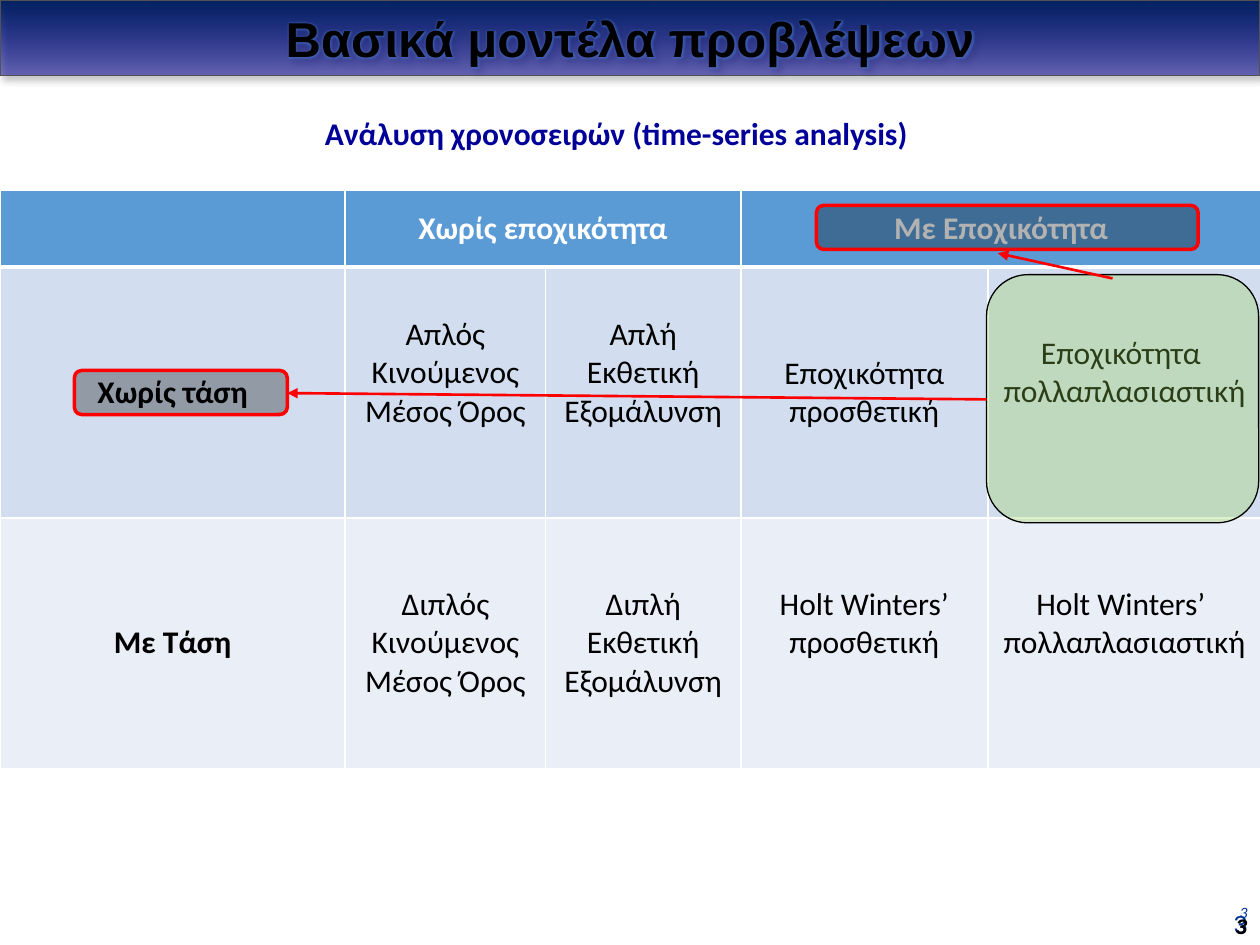
from lxml.etree import SubElement
from pptx import Presentation
from pptx.dml.color import RGBColor
from pptx.enum.shapes import MSO_CONNECTOR, MSO_SHAPE
from pptx.enum.text import MSO_ANCHOR, MSO_AUTO_SIZE, PP_ALIGN
from pptx.oxml import parse_xml
from pptx.oxml.ns import nsdecls, qn
from pptx.util import Inches, Pt

# Content
TITLE = "Βασικά μοντέλα προβλέψεων"
SUBTITLE = "Ανάλυση χρονοσειρών (time-series analysis)"
HEADERS = {1: "Χωρίς εποχικότητα", 3: "Με Εποχικότητα"}  # each spans two columns
MODELS = [
    ["Χωρίς τάση", "Απλός Κινούμενος Μέσος Όρος", "Απλή Εκθετική Εξομάλυνση",
     "Εποχικότητα προσθετική", "Εποχικότητα \nπολλαπλασιαστική"],
    ["Με Τάση", "Διπλός Κινούμενος Μέσος Όρος", "Διπλή Εκθετική Εξομάλυνση",
     "Holt Winters’ προσθετική", "Holt Winters’ \nπολλαπλασιαστική"],
]
RAISED = {(1, 1), (1, 2), (1, 4), (2, 3), (2, 4)}  # cells whose text sits higher
COLUMNS = [2.74, 1.59, 1.55, 1.96, 2.17]
ROWS = [0.61, 1.99, 1.99]
ROW_FILLS = ["5B9BD5", "D2DEEF", "EAEFF7"]
PAGE_NUMBERS = [  # box, anchor, font
    ((7.67, 6.98, 2.33, 0.52), MSO_ANCHOR.MIDDLE,
     dict(size=Pt(9), name="Calibri", color="003399", italic=True)),
    ((7.67, 6.98, 2.33, 0.52), MSO_ANCHOR.BOTTOM,
     dict(size=Pt(14), name="Arial", color="003399")),
    ((9.5, 7.2, 0.5, 0.3), MSO_ANCHOR.BOTTOM,
     dict(size=Pt(12), name="Arial", color="000000", bold=True, italic=True)),
]
HIGHLIGHTS = [  # box, fill, line colour, line width
    ((7.83, 2.18, 2.16, 1.97), "92D050", "000000", 0.75),
    ((6.48, 1.63, 3.03, 0.35), "000000", "FF0000", 2),
    ((0.59, 2.94, 1.69, 0.35), "000000", "FF0000", 2),
]
ARROWS = [((7.83, 3.17), (2.28, 3.12)), ((8.83, 2.21), (7.92, 2.01))]


def rgb(value):
    return RGBColor.from_string(value)


def inches(values):
    return [Inches(value) for value in values]


def write(frame, text, align, color, **font_format):
    frame.text = text
    for paragraph in frame.paragraphs:
        paragraph.alignment = align
        font = paragraph.runs[0].font
        font.color.rgb = rgb(color)
        for key, value in font_format.items():
            setattr(font, key, value)


def border(cell, side, width):
    line = SubElement(cell._tc.get_or_add_tcPr(), qn("a:ln" + side), w=str(Pt(width)))
    SubElement(SubElement(line, qn("a:solidFill")), qn("a:srgbClr"), val="FFFFFF")


def shadow(blur, distance, alpha):
    return (f'<a:outerShdw blurRad="{Pt(blur)}" dist="{Pt(distance)}" dir="2700000" '
            f'algn="tl" rotWithShape="0"><a:srgbClr val="000000">'
            f'<a:alpha val="{alpha}000"/></a:srgbClr></a:outerShdw>')


def effects(content):
    return parse_xml(f'<a:effectLst {nsdecls("a")}>{content}</a:effectLst>')


prs = Presentation()
prs.slide_width, prs.slide_height = inches((10, 7.5))
slide = prs.slides.add_slide(prs.slide_layouts[6])
shapes = slide.shapes

# Table of models
table = shapes.add_table(len(ROWS), len(COLUMNS),
                         *inches((0, 1.51, sum(COLUMNS), sum(ROWS)))).table
for column, width in zip(table.columns, COLUMNS):
    column.width = Inches(width)
for row, height in zip(table.rows, ROWS):
    row.height = Inches(height)

header_row = [HEADERS.get(c, "") for c in range(len(COLUMNS))]
for r, texts in enumerate([header_row] + MODELS):
    for c, text in enumerate(texts):
        cell = table.cell(r, c)
        cell.vertical_anchor = MSO_ANCHOR.MIDDLE
        if (r, c) in RAISED:
            cell.margin_bottom = Inches(0.36)
        for side in "LRTB":
            header_edge = (r, side) in ((0, "B"), (1, "T"))
            border(cell, side, 3 if header_edge else 1)
        cell.fill.solid()
        cell.fill.fore_color.rgb = rgb(ROW_FILLS[r])
        if text:
            write(cell.text_frame, text, PP_ALIGN.CENTER,
                  "000000" if r else "FFFFFF",
                  size=Pt(18), name="Calibri", bold=r == 0 or c == 0)
for c in HEADERS:
    table.cell(0, c).merge(table.cell(0, c + 1))

# Page numbers
for box, anchor, font_format in PAGE_NUMBERS:
    frame = shapes.add_textbox(*inches(box)).text_frame
    frame.word_wrap = True
    frame.vertical_anchor = anchor
    write(frame, "3", PP_ALIGN.RIGHT, **font_format)

# Title bar with a gradient, a shadow and glowing text
bar = shapes.add_shape(MSO_SHAPE.RECTANGLE, *inches((0, 0, 10, 0.6)))
bar.line.color.rgb = rgb("525252")
bar.line.width = Pt(0.75)
bar_properties = bar._element.spPr
bar_properties.insert(2, parse_xml(
    f'<a:gradFill {nsdecls("a")} rotWithShape="1"><a:gsLst>'
    '<a:gs pos="0"><a:srgbClr val="000099"><a:alpha val="50000"/></a:srgbClr></a:gs>'
    '<a:gs pos="100000"><a:srgbClr val="002060"/></a:gs>'
    '</a:gsLst><a:lin ang="16200000" scaled="0"/></a:gradFill>'))
bar_properties.append(effects(shadow(4, 3, 40)))
bar.text_frame.vertical_anchor = MSO_ANCHOR.MIDDLE
write(bar.text_frame, TITLE, PP_ALIGN.CENTER, "000000",
      size=Pt(28), name="Arial", bold=True)
title_properties = bar.text_frame.paragraphs[0].runs[0]._r.get_or_add_rPr()
glow = (f'<a:glow rad="{Pt(4)}"><a:srgbClr val="4472C4">'
        '<a:alpha val="60000"/></a:srgbClr></a:glow>')
title_properties.find(qn("a:solidFill")).addnext(effects(glow + shadow(3, 3, 40)))

# Translucent highlights
for box, fill, line, width in HIGHLIGHTS:
    highlight = shapes.add_shape(MSO_SHAPE.ROUNDED_RECTANGLE, *inches(box))
    highlight.shadow.inherit = False
    highlight.fill.solid()
    highlight.fill.fore_color.rgb = rgb(fill)
    color = highlight._element.spPr.find(qn("a:solidFill"))[0]
    SubElement(color, qn("a:alpha"), val="30000")
    highlight.line.color.rgb = rgb(line)
    highlight.line.width = Pt(width)

# Arrows from the chosen model to its row and column
for start, end in ARROWS:
    arrow = shapes.add_connector(MSO_CONNECTOR.STRAIGHT, *inches(start + end))
    arrow.line.color.rgb = rgb("FF0000")
    arrow.line.width = Pt(1.5)
    SubElement(arrow.line._get_or_add_ln(), qn("a:tailEnd"), type="triangle")
    SubElement(arrow._element.spPr, qn("a:effectLst"))

# Subtitle
subtitle = shapes.add_textbox(*inches((2.48, 0.86, 4.87, 0.4))).text_frame
subtitle.word_wrap = False
subtitle.auto_size = MSO_AUTO_SIZE.SHAPE_TO_FIT_TEXT
write(subtitle, SUBTITLE, PP_ALIGN.LEFT, "000099",
      size=Pt(18), name="Calibri", bold=True)

prs.save("out.pptx")
